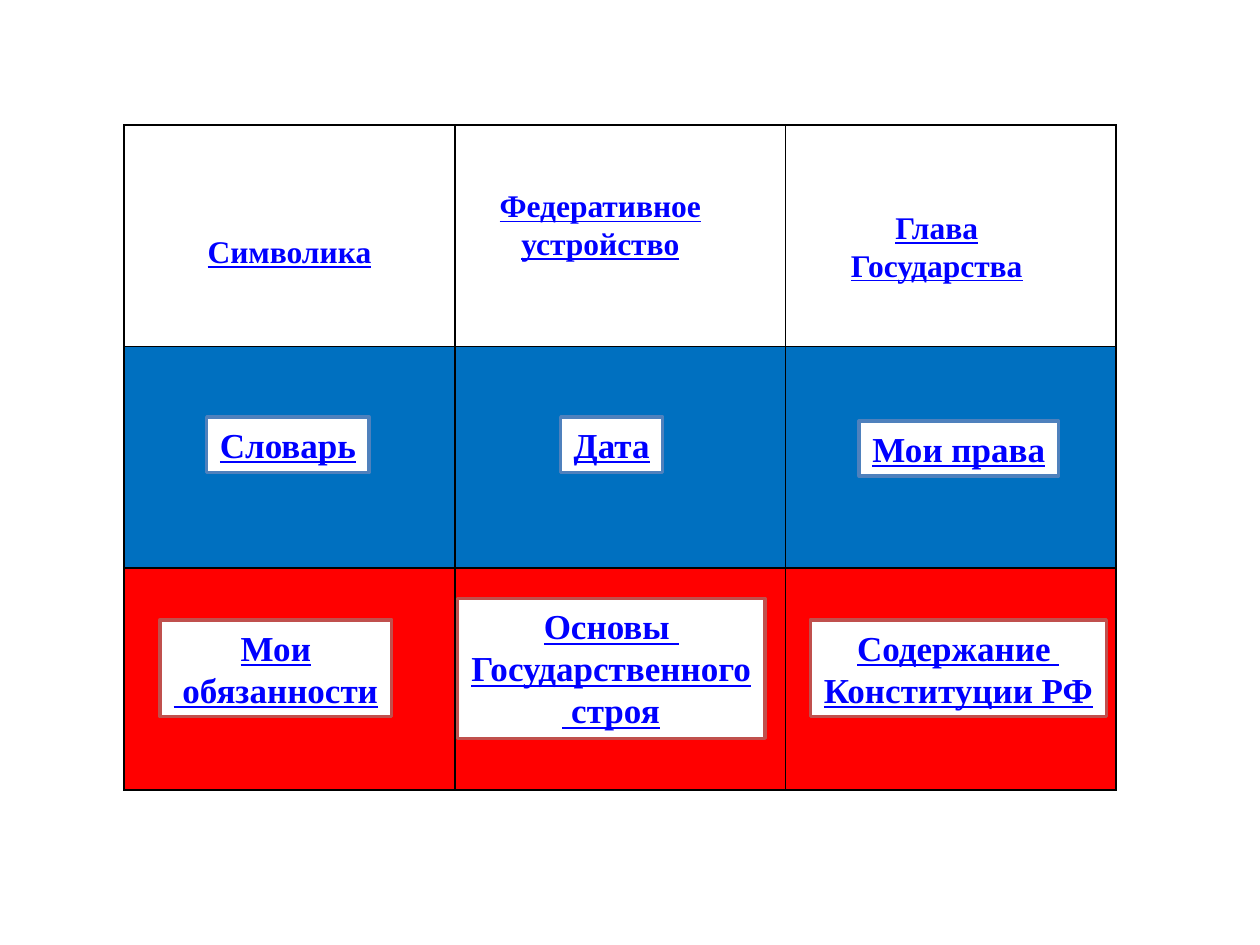
"""Build a three-by-three menu of constitution topics in the colours of the Russian flag."""
from lxml.etree import SubElement
from pptx import Presentation
from pptx.dml.color import RGBColor
from pptx.enum.shapes import MSO_SHAPE as Shape
from pptx.enum.text import MSO_ANCHOR as Anchor, PP_ALIGN as Align
from pptx.oxml.ns import qn
from pptx.util import Pt

COLORS = {"white": "FFFFFF", "blue": "0070C0", "red": "FF0000", "topic": "0000FF",
          "blue_frame": "4F81BD", "red_frame": "C0504D", "grid": "000000"}
COLUMN_WIDTH, ROW_HEIGHT = 189, 126.7


def color(name):
    return RGBColor.from_string(COLORS[name])


def write_topic(frame, lines, size):
    frame.text = "\n".join(lines)
    for paragraph in frame.paragraphs:
        paragraph.alignment = Align.CENTER
        font = paragraph.font
        font.name, font.size = "Times New Roman", Pt(size)
        font.bold = font.underline = True
        font.color.rgb = color("topic")


deck = Presentation()
deck.slide_width, deck.slide_height = Pt(720), Pt(540)
slide = deck.slides.add_slide(deck.slide_layouts[6])

flag = slide.shapes.add_table(3, 3, Pt(70.9), Pt(71.3), Pt(3 * COLUMN_WIDTH), Pt(3 * ROW_HEIGHT)).table
flag.first_row = flag.horz_banding = False
for column in flag.columns:
    column.width = Pt(COLUMN_WIDTH)
for row, stripe in zip(flag.rows, (None, "blue", "red")):
    row.height = Pt(ROW_HEIGHT)
    for cell in row.cells:
        properties = cell._tc.get_or_add_tcPr()
        for side in ("a:lnL", "a:lnR", "a:lnT", "a:lnB"):
            border = SubElement(properties, qn(side), w=str(Pt(1)))
            SubElement(SubElement(border, qn("a:solidFill")), qn("a:srgbClr"), val=COLORS["grid"])
        if stripe:
            cell.fill.solid()
            cell.fill.fore_color.rgb = color(stripe)
        else:
            cell.fill.background()

white_topics = [
    ("Символика", 94.5, 128.9, 141.8, 28.8),
    ("Федеративное устройство", 275, 103, 136.1, 51.1),
    ("Глава Государства", 473, 115.2, 124.6, 51.1),
]
for topic, left, top, width, height in white_topics:
    label = slide.shapes.add_textbox(Pt(left), Pt(top), Pt(width), Pt(height))
    label.text_frame.word_wrap = True
    write_topic(label.text_frame, [topic], 18)

framed_topics = [
    (["Словарь"], "blue_frame", 118.1, 238.3, 92.9, 31.7),
    (["Дата"], "blue_frame", 320.4, 238.3, 58.3, 31.7),
    (["Мои права"], "blue_frame", 491, 240.5, 113.8, 31.7),
    (["Мои", " обязанности"], "red_frame", 91.4, 354.2, 132.5, 55.4),
    (["Основы ", "Государственного", " строя"], "red_frame", 261.4, 342, 175.7, 79.9),
    (["Содержание ", "Конституции РФ"], "red_frame", 463, 354.2, 169.2, 55.4),
]
for lines, frame_color, left, top, width, height in framed_topics:
    plate = slide.shapes.add_shape(Shape.RECTANGLE, Pt(left), Pt(top), Pt(width), Pt(height))
    plate.shadow.inherit = False
    plate.fill.solid()
    plate.fill.fore_color.rgb = color("white")
    plate.line.color.rgb = color(frame_color)
    plate.line.width = Pt(2)
    plate.text_frame.word_wrap = False
    plate.text_frame.vertical_anchor = Anchor.TOP
    write_topic(plate.text_frame, lines, 20)

deck.save("out.pptx")
